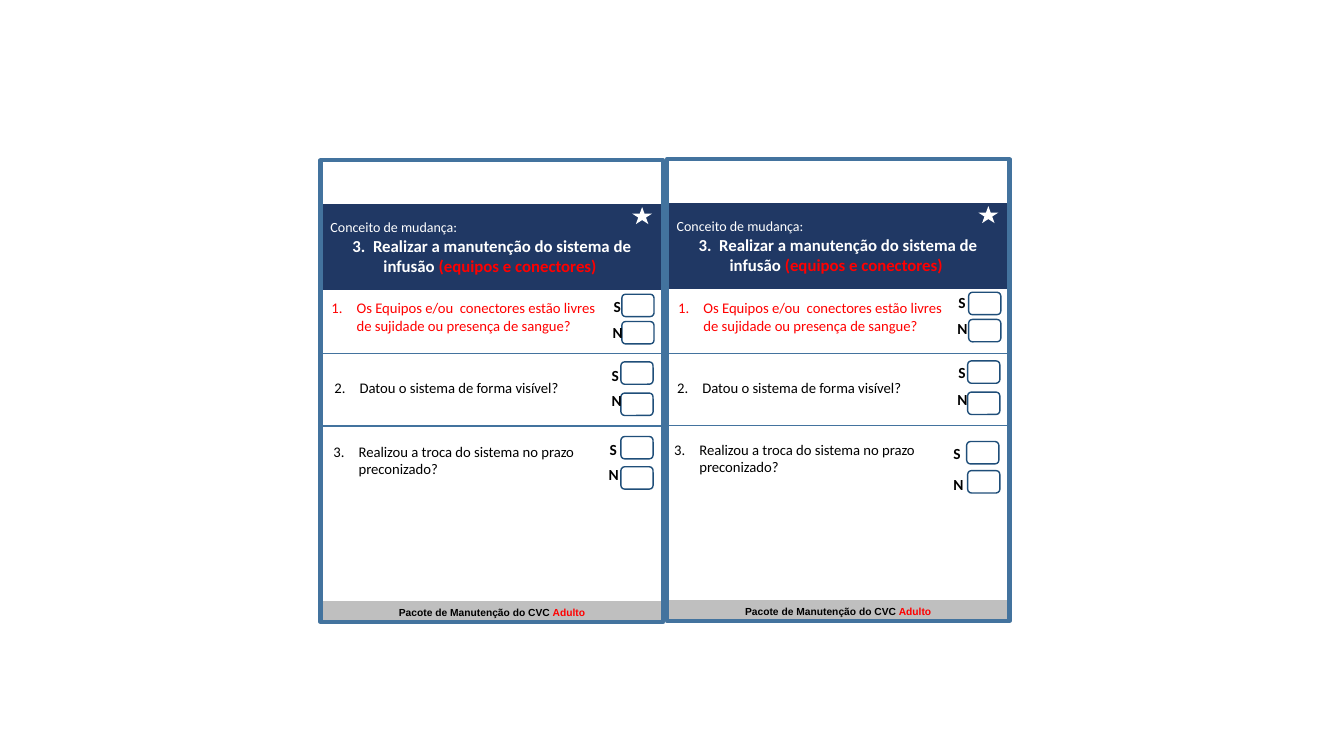
import pptx
import pptx.util
import pptx.dml.color
import pptx.enum.shapes
import pptx.enum.text
import pptx.oxml.ns
import lxml.etree

Pt = pptx.util.Pt
RGBColor = pptx.dml.color.RGBColor
SHAPE = pptx.enum.shapes.MSO_SHAPE
ALIGN = pptx.enum.text.PP_ALIGN
ANCHOR = pptx.enum.text.MSO_ANCHOR

WHITE = RGBColor(0xFF, 0xFF, 0xFF)
BLACK = RGBColor(0, 0, 0)
RED = RGBColor(0xFF, 0, 0)
NAVY = RGBColor(0x20, 0x38, 0x64)
GREY = RGBColor(0xBF, 0xBF, 0xBF)
FRAME_BLUE = RGBColor(0x43, 0x73, 0x9E)
BOX_BLUE = RGBColor(0x1F, 0x4E, 0x79)

HEADER = [
    (ALIGN.LEFT, [("Conceito de mudança:", 10, False, WHITE)]),
    (ALIGN.CENTER, [("3.  Realizar a manutenção do sistema de infusão ", 12, True, WHITE),
                    ("(equipos e conectores) ", 12, True, RED)]),
]
FOOTER = [(ALIGN.CENTER, [("Pacote de Manutenção do CVC ", 7.3, True, BLACK),
                          ("Adulto", 7.3, True, RED)])]

# text, colour, width, height, space kept free below the text
QUESTIONS = [
    ("Os Equipos e/ou  conectores estão livres de sujidade ou presença de sangue?", RED, 208, 63.4, 12.8),
    ("Datou o sistema de forma visível?", BLACK, 198.7, 63.4, 12.8),
    ("Realizou a troca do sistema no prazo preconizado?", BLACK, 201.6, 36.7, 0),
]

CARDS = [
    {"left": 229, "top": 114.5, "dividers": [252.7, 304.2],
     "questions": [(229.7, 200.9), (231.8, 251.3), (231.1, 310.3)],
     "boxes": [[(444.2, 210.2), (444.2, 229.7)],
               [(443.5, 258.5), (443.5, 280.8)],
               [(443.5, 311.8), (443.5, 333.4)]],
     "labels": [[(431.3, 212.4), (430.6, 232.6)],
                [(429.8, 262.1), (429.8, 280.8)],
                [(428.4, 314.6), (427.7, 334.1)]]},
    {"left": 476.3, "top": 113.8, "dividers": [252.4, 303.8],
     "questions": [(477.4, 200.9), (476.6, 251.3), (474.5, 308.9)],
     "boxes": [[(691.9, 208.8), (691.9, 228.2)],
               [(691.2, 257.8), (691.2, 280.1)],
               [(690.5, 315.4), (691.2, 336.2)]],
     "labels": [[(677.5, 210.2), (676.8, 229.7)],
                [(677.5, 259.9), (676.8, 280.1)],
                [(673.9, 317.5), (673.9, 340.6)]]},
]
ANSWERS = [("S", 12.2), ("N", 10.1)]
CARD_WIDTH, CARD_HEIGHT = 244.8, 329.8
HEADER_DROP, HEADER_HEIGHT = 31.3, 61.2
FOOTER_DROP, FOOTER_HEIGHT = 314.9, 15.8
STAR_RIGHT_SHIFT, STAR_DROP = 222.5, 33.4


def add_shape(kind, left, top, width, height, fill=None, line=None, weight=1):
    shape = slide.shapes.add_shape(kind, Pt(left), Pt(top), Pt(width), Pt(height))
    shape.shadow.inherit = False
    if fill is None:
        shape.fill.background()
    else:
        shape.fill.solid()
        shape.fill.fore_color.rgb = fill
    if line is None:
        shape.line.fill.background()
    else:
        shape.line.color.rgb = line
        shape.line.width = Pt(weight)
    return shape


def write(shape, paragraphs, font="Calibri"):
    frame = shape.text_frame
    frame.word_wrap = True
    frame.vertical_anchor = ANCHOR.MIDDLE
    for index, (align, runs) in enumerate(paragraphs):
        paragraph = frame.add_paragraph() if index else frame.paragraphs[0]
        paragraph.alignment = align
        for text, size, bold, colour in runs:
            run = paragraph.add_run()
            run.text = text
            run.font.name = font
            run.font.size = Pt(size)
            run.font.bold = bold
            run.font.color.rgb = colour
    return frame


def add_text(left, top, width, height, paragraphs):
    return write(slide.shapes.add_textbox(Pt(left), Pt(top), Pt(width), Pt(height)), paragraphs)


def number_paragraph(paragraph, start):
    properties = paragraph._p.get_or_add_pPr()
    properties.set("marL", str(Pt(18)))
    properties.set("indent", str(-Pt(18)))
    numbering = lxml.etree.SubElement(properties, pptx.oxml.ns.qn("a:buAutoNum"))
    numbering.set("type", "arabicPeriod")
    numbering.set("startAt", str(start))


def add_divider(left, y):
    divider = slide.shapes.add_connector(pptx.enum.shapes.MSO_CONNECTOR.STRAIGHT,
                                         Pt(left), Pt(y), Pt(left + CARD_WIDTH), Pt(y))
    divider.line.color.rgb = FRAME_BLUE
    divider.line.width = Pt(1)
    lxml.etree.SubElement(divider._element.spPr, pptx.oxml.ns.qn("a:effectLst"))


def add_card(card):
    left, top = card["left"], card["top"]
    footer = add_shape(SHAPE.RECTANGLE, left, top + FOOTER_DROP, CARD_WIDTH, FOOTER_HEIGHT, GREY)
    write(footer, FOOTER, "Arial")
    header = add_shape(SHAPE.RECTANGLE, left, top + HEADER_DROP, CARD_WIDTH, HEADER_HEIGHT, NAVY)
    write(header, HEADER)
    add_shape(SHAPE.RECTANGLE, left, top, CARD_WIDTH, CARD_HEIGHT, line=FRAME_BLUE, weight=3)
    add_shape(SHAPE.STAR_5_POINT, left + STAR_RIGHT_SHIFT, top + STAR_DROP, 14.4, 12.2, WHITE)
    for y in card["dividers"]:
        add_divider(left, y)
    rows = zip(QUESTIONS, card["questions"], card["boxes"], card["labels"])
    for number, (question, place, boxes, labels) in enumerate(rows, 1):
        text, colour, width, height, space_below = question
        frame = add_text(*place, width, height, [(ALIGN.LEFT, [(text, 10.5, False, colour)])])
        frame.margin_bottom = Pt(3.6 + space_below)
        number_paragraph(frame.paragraphs[0], number)
        for (letter, label_height), box, label in zip(ANSWERS, boxes, labels):
            add_shape(SHAPE.ROUNDED_RECTANGLE, *box, 23, 16, line=BOX_BLUE)
            add_text(*label, 17.3, label_height, [(ALIGN.CENTER, [(letter, 11, True, BLACK)])])


presentation = pptx.Presentation()
presentation.slide_width = Pt(960)
presentation.slide_height = Pt(540)
slide = presentation.slides.add_slide(presentation.slide_layouts[6])
for card in CARDS:
    add_card(card)
presentation.save("out.pptx")
